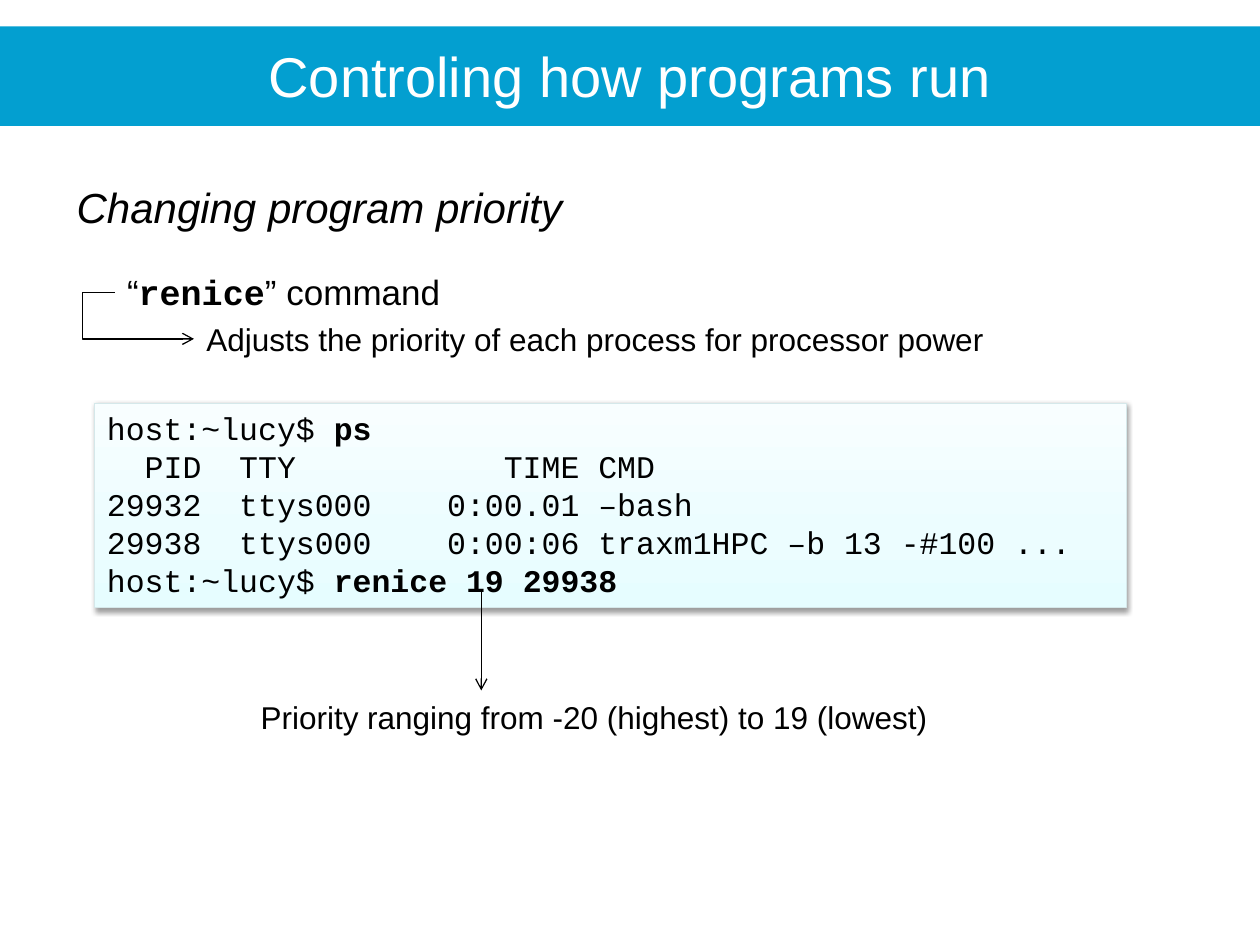
from copy import deepcopy

from lxml.etree import SubElement
from pptx import Presentation
from pptx.dml.color import RGBColor
from pptx.enum.shapes import MSO_CONNECTOR as CONN, MSO_SHAPE as SHAPE
from pptx.enum.text import MSO_ANCHOR, PP_ALIGN
from pptx.oxml.ns import qn
from pptx.util import Inches, Pt

WHITE = RGBColor(0xFF, 0xFF, 0xFF)
BLACK = RGBColor(0, 0, 0)
BLUE = RGBColor(0x03, 0x9F, 0xD0)
PALE_BORDER = RGBColor(0xD5, 0xE8, 0xEA)
PALE_STOPS = [(0, RGBColor(0xE6, 0xFD, 0xFF)),
              (0.35, RGBColor(0xEC, 0xFD, 0xFF)),
              (1, RGBColor(0xF8, 0xFE, 0xFF))]
SANS, MONO = "Arial", "Courier New"

# Each line is a list of (text, bold) runs.
SESSION = [
    [("host:~lucy$ ", False), ("ps", True)],
    [("  PID  TTY           TIME CMD", False)],
    [("29932  ttys000    0:00.01 –bash", False)],
    [("29938  ttys000    0:00:06 traxm1HPC –b 13 -#100 ...", False)],
    [("host:~lucy$ ", False), ("renice 19 29938", True)],
]


def inches(*lengths):
    return [Inches(n) for n in lengths]


def style(font, size, name=SANS, color=BLACK):
    font.size, font.name = Pt(size), name
    font.color.rgb = color


def add_run(p, text, bold=False):
    r = p.add_run()
    r.text = text
    if bold:
        r.font.bold = True
    return r


def add_title(s, text):
    """Fill the title placeholder and put the coloured band behind it."""
    band = s.shapes.add_shape(SHAPE.RECTANGLE, *inches(0, 0.21, 10, 0.79))
    band.shadow.inherit = False
    band.fill.solid()
    band.fill.fore_color.rgb = BLUE
    band.line.fill.background()
    title = s.shapes.title
    title._element.addprevious(band._element)
    title.left, title.top, title.width, title.height = inches(0, 0.28, 10, 0.64)
    title.text_frame.text = text
    p = title.text_frame.paragraphs[0]
    p.alignment = PP_ALIGN.CENTER
    style(p.font, 32, color=WHITE)


def add_text(s, box, size, text=""):
    tf = s.shapes.add_textbox(*inches(*box)).text_frame
    tf.word_wrap = True
    p = tf.paragraphs[0]
    if text:
        add_run(p, text)
    style(p.font, size)
    return p


def add_arrow(s, kind, start, end):
    cxn = s.shapes.add_connector(kind, *inches(*start, *end))
    cxn.line.color.rgb = BLACK
    cxn.line.width = Pt(0.75)
    SubElement(cxn.line._get_or_add_ln(), qn("a:tailEnd"), type="arrow")
    SubElement(cxn._element.spPr, qn("a:effectLst"))
    return cxn


def set_bend(cxn, share):
    """Place an elbow's upright part at a share of the connector's width."""
    guides = cxn._element.spPr.find(qn("a:prstGeom")).get_or_add_avLst()
    SubElement(guides, qn("a:gd"), name="adj1", fmla=f"val {round(share * 100000)}")


def fill_gradient(sp, stops, angle):
    sp.fill.gradient()
    sp.fill.gradient_angle = angle
    first = sp._element.spPr.find(".//" + qn("a:gs"))
    for _ in stops[2:]:
        first.addnext(deepcopy(first))
    for stop, (position, color) in zip(sp.fill.gradient_stops, stops):
        stop.position = position
        stop.color.rgb = color


def add_shadow(sp, blur, distance, opacity):
    """Give the shape a soft black shadow below it."""
    sp.shadow.inherit = False
    effects = sp._element.spPr.find(qn("a:effectLst"))
    shadow = SubElement(effects, qn("a:outerShdw"), blurRad=str(Pt(blur)),
                        dist=str(Pt(distance)), dir="5400000", rotWithShape="0")
    color = SubElement(shadow, qn("a:srgbClr"), val="000000")
    SubElement(color, qn("a:alpha"), val=str(opacity * 1000))


def add_terminal(s, box, lines):
    sp = s.shapes.add_shape(SHAPE.RECTANGLE, *inches(*box))
    fill_gradient(sp, PALE_STOPS, 90)
    sp.line.color.rgb = PALE_BORDER
    sp.line.width = Pt(0.75)
    add_shadow(sp, 3.1, 1.6, 38)
    tf = sp.text_frame
    tf.word_wrap = True
    tf.vertical_anchor = MSO_ANCHOR.TOP
    for i, runs in enumerate(lines):
        p = tf.add_paragraph() if i else tf.paragraphs[0]
        p.alignment = PP_ALIGN.LEFT
        style(p.font, 18, MONO)
        for text, bold in runs:
            add_run(p, text, bold)


def main():
    prs = Presentation()
    prs.slide_width, prs.slide_height = inches(10, 7.5)
    s = prs.slides.add_slide(prs.slide_layouts[5])

    add_title(s, "Controling how programs run")
    heading = add_text(s, (0.51, 1.39, 8.66, 0.5), 24, "Changing program priority")
    heading.font.italic = True

    command = add_text(s, (0.91, 2.1, 7.32, 0.44), 20, "“")
    add_run(command, "renice", bold=True).font.name = MONO
    add_run(command, "” command")
    add_text(s, (1.54, 2.49, 8.11, 0.4), 18,
             "Adjusts the priority of each process for processor power")
    set_bend(add_arrow(s, CONN.ELBOW, (0.91, 2.32), (1.54, 2.69)), -0.4)

    add_terminal(s, (0.75, 3.2, 8.19, 1.62), SESSION)
    add_arrow(s, CONN.STRAIGHT, (3.82, 4.69), (3.82, 5.48))
    add_text(s, (1.97, 5.49, 6.77, 0.4), 18,
             "Priority ranging from -20 (highest) to 19 (lowest)")

    prs.save("out.pptx")


if __name__ == "__main__":
    main()
